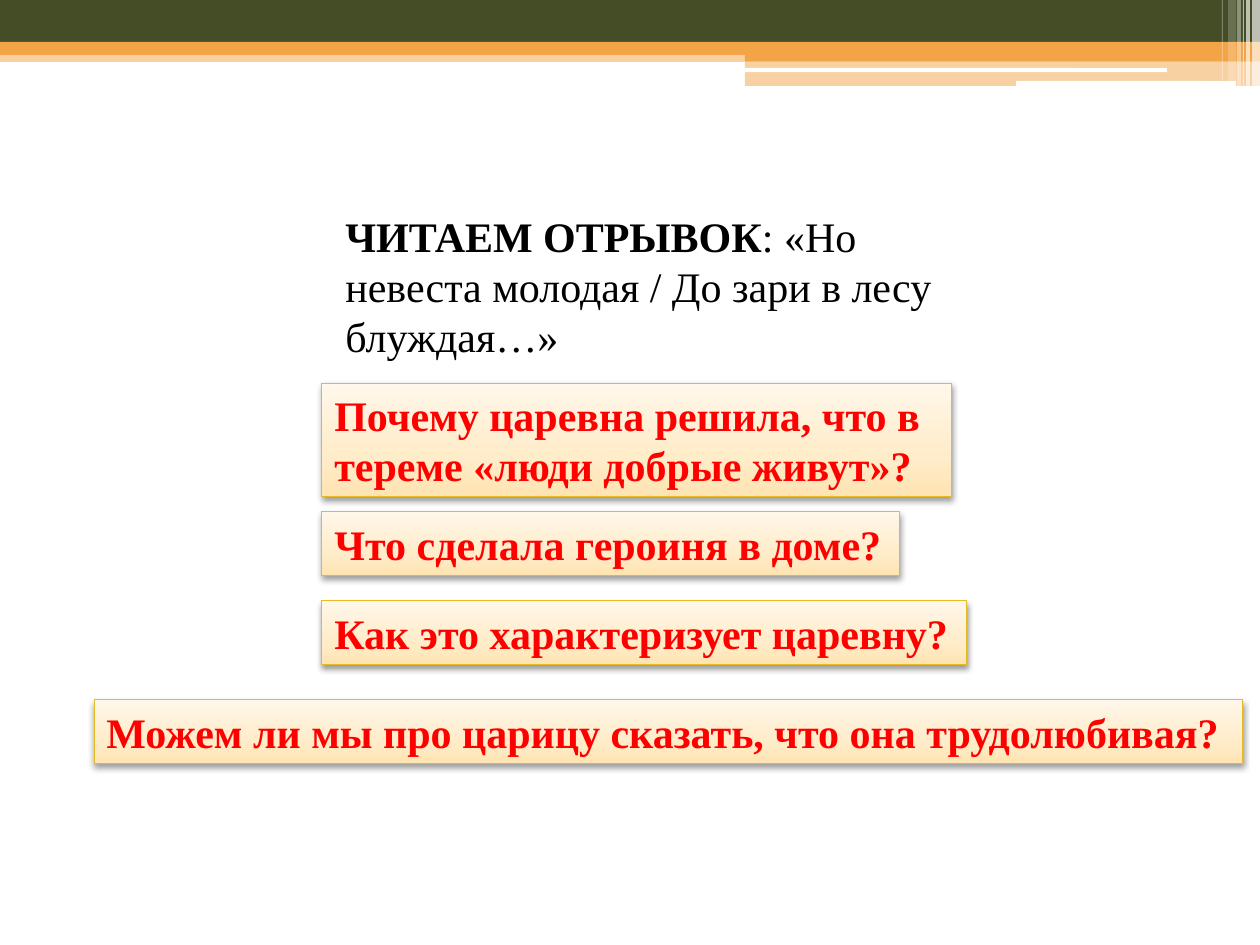
"""Builds a reading-lesson slide with an excerpt and four questions."""
from lxml import etree
from pptx import Presentation
from pptx.dml.color import RGBColor
from pptx.enum.shapes import MSO_SHAPE
from pptx.enum.text import MSO_ANCHOR, MSO_AUTO_SIZE, PP_ALIGN
from pptx.oxml.ns import qn
from pptx.util import Pt

RECT, ROUNDED = MSO_SHAPE.RECTANGLE, MSO_SHAPE.ROUNDED_RECTANGLE
TOP, MIDDLE = MSO_ANCHOR.TOP, MSO_ANCHOR.MIDDLE
GROW, LEFT = MSO_AUTO_SIZE.SHAPE_TO_FIT_TEXT, PP_ALIGN.LEFT
EMU_PER_PX = 914400 / 126
GREEN, ORANGE, WHITE = "444D26", "F3A447", "FFFFFF"
GOLD, RED, BLACK = "E7BA23", "FF0000", "000000"
CREAM_STOPS = ((0, "FFE4B2"), (35, "FFECC9"), (100, "FFF7EA"))


def px(n):
    return round(n * EMU_PER_PX)


def rgb(value):
    return RGBColor.from_string(value)


def sub(parent, tag, **attrs):
    return etree.SubElement(parent, qn(tag), {k: str(v) for k, v in attrs.items()})


def add_run(p, text, size=24, font="Times New Roman", color=BLACK, bold=False):
    r = p.add_run()
    r.text = text
    r.font.size, r.font.name, r.font.bold = Pt(size), font, bold
    r.font.color.rgb = rgb(color)


class Deck:
    """Holds the style and the current slide."""

    def __init__(self, width, height):
        self.prs = Presentation()
        self.prs.slide_width, self.prs.slide_height = px(width), px(height)
        self.s = self.prs.slides.add_slide(self.prs.slide_layouts[6])

    def band(self, x, y, w, h, color, alpha=100, kind=RECT):
        sp = self.s.shapes.add_shape(kind, px(x), px(y), px(w), px(h))
        sp.shadow.inherit = False
        sp.fill.solid()
        sp.fill.fore_color.rgb = rgb(color)
        sp.line.fill.background()
        if alpha < 100:
            clr = sp.fill._xPr.find(qn("a:solidFill"))[0]
            sub(clr, "a:alpha", val=alpha * 1000)

    def frame(self, sp, wrap=True, anchor=TOP):
        tf = sp.text_frame
        tf.word_wrap, tf.auto_size, tf.vertical_anchor = wrap, GROW, anchor
        p = tf.paragraphs[0]
        p.alignment = LEFT
        return p

    def excerpt(self, x, y, w, h, heading, quote):
        sp = self.s.shapes.add_textbox(px(x), px(y), px(w), px(h))
        p = self.frame(sp)
        add_run(p, heading, bold=True)
        add_run(p, quote)

    def question(self, x, y, w, h, text, wrap=False, anchor=MIDDLE):
        sp = self.s.shapes.add_shape(RECT, px(x), px(y), px(w), px(h))
        sp.shadow.inherit = False
        sp.line.color.rgb = rgb(GOLD)
        sp.line.width = Pt(0.5)
        self.cream_fill(sp)
        self.soft_shadow(sp)
        add_run(self.frame(sp, wrap, anchor), text, color=RED, bold=True)

    def cream_fill(self, sp):
        sp.fill.gradient()
        sp.fill.gradient_angle = 90
        stops = sp._element.spPr.find(qn("a:gradFill")).find(qn("a:gsLst"))
        for stop in list(stops):
            stops.remove(stop)
        for pos, color in CREAM_STOPS:
            sub(sub(stops, "a:gs", pos=pos * 1000), "a:srgbClr", val=color)

    def soft_shadow(self, sp):
        effects = sp._element.spPr.find(qn("a:effectLst"))
        shadow = sub(effects, "a:outerShdw", blurRad=Pt(3.5), dist=Pt(2),
                     dir=5400000, rotWithShape=0)
        sub(sub(shadow, "a:srgbClr", val=BLACK), "a:alpha", val=38000)


def main():
    deck = Deck(1260, 945)

    deck.band(0, 50, 1260, 12, ORANGE, 50)
    deck.band(0, 0, 1260, 43, GREEN)
    deck.band(0, 42, 1260, 13, ORANGE)
    deck.band(745, 49, 515, 12, ORANGE)
    deck.band(745, 61, 515, 25, ORANGE, 50)
    deck.band(745, 68, 422, 4, WHITE, kind=ROUNDED)
    deck.band(1016, 81, 220, 5, WHITE, kind=ROUNDED)
    for x, w, h, alpha in ((1252, 8, 86, 65), (1246, 4, 86, 65), (1243, 1, 86, 60),
                           (1237, 4, 86, 40), (1228, 8, 81, 20), (1222, 1, 81, 30)):
        deck.band(x, 0, w, h, WHITE, alpha)

    deck.excerpt(333, 204, 630, 165, "ЧИТАЕМ ОТРЫВОК",
                 ": «Но невеста молодая / До зари в лесу блуждая…»")
    deck.question(322, 383, 630, 114,
                  "Почему царевна решила, что в тереме «люди добрые живут»?",
                  wrap=True, anchor=TOP)
    deck.question(322, 512, 578, 64, "Что сделала героиня в доме?", anchor=TOP)
    deck.question(322, 601, 645, 64, "Как это характеризует царевну?")
    deck.question(94, 700, 1149, 64,
                  "Можем ли мы про царицу сказать, что она трудолюбивая?")

    deck.prs.save("out.pptx")


if __name__ == "__main__":
    main()
